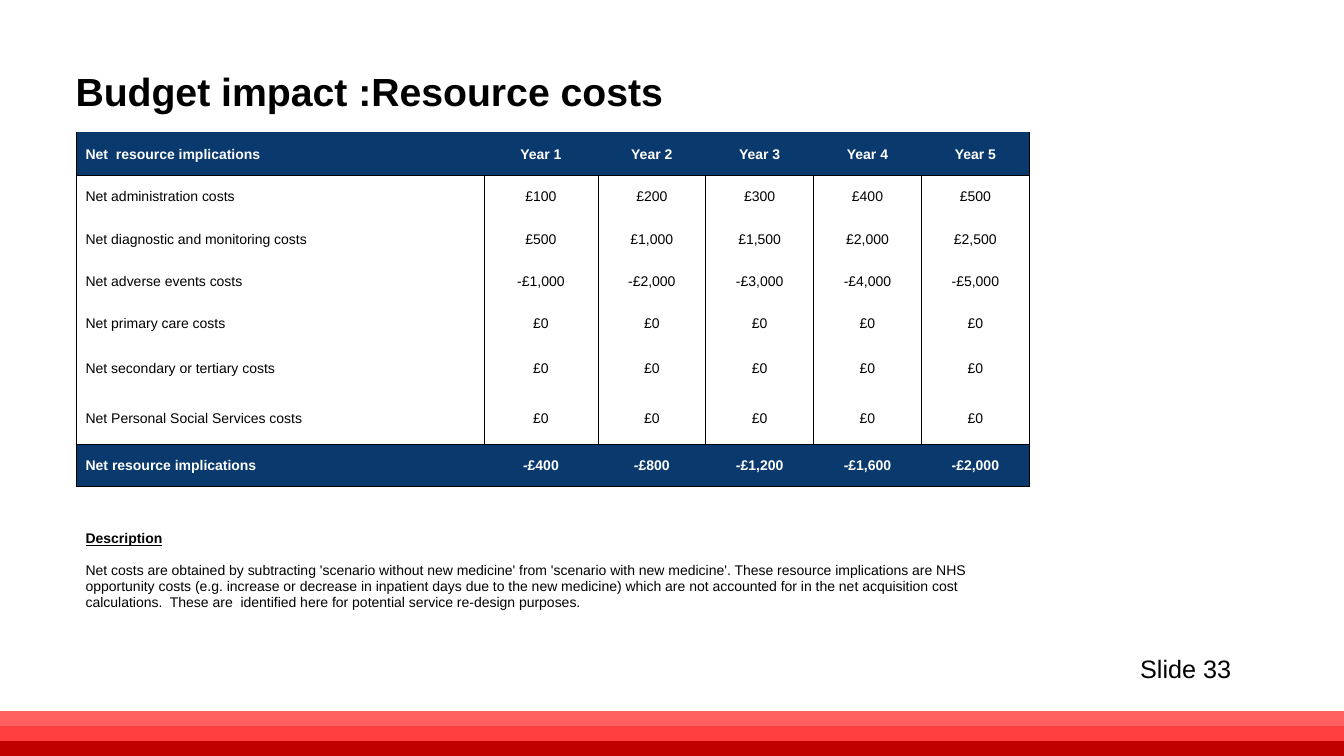
import dataclasses

import lxml.etree
import pptx
import pptx.dml.color
import pptx.enum.shapes
import pptx.enum.text
import pptx.oxml.ns
import pptx.util

ALIGN = pptx.enum.text.PP_ALIGN
ANCHOR = pptx.enum.text.MSO_ANCHOR
qn = pptx.oxml.ns.qn


@dataclasses.dataclass(frozen=True)
class Theme:
    font: str = "Arial"
    title_size: int = 28
    number_size: int = 18
    table_size: int = 10
    black: str = "000000"
    white: str = "FFFFFF"
    navy: str = "09396D"
    stripes: tuple = ("FF6161", "FF3F3F", "C00000")
    thin: float = 0.5
    thick: float = 1


THEME = Theme()
SLIDE_WIDTH = pptx.util.Inches(13.33)
SLIDE_HEIGHT = pptx.util.Inches(7.5)

TITLE_BOX = (4.88, 8, 73.74, 7.73)
TABLE_BOX = (5.7, 17.47, 70.89, 70.27)
NUMBER_BOX = (84.1, 85.73, 8.33, 5.33)
STRIPES_BOX = (0, 94.07, 100, 5.93)

COLUMN_SHARES = (4.04, 1.13, 1.07, 1.07, 1.07, 1.07)
ROW_SHARES = (0.43, 0.42, 0.42, 0.42, 0.42, 0.47, 0.52, 0.42, 0.28, 0.47, 1)

NO_COST = ["£0"] * 5
COST_ROWS = [
    ["Net  resource implications"] + [f"Year {year}" for year in range(1, 6)],
    ["Net administration costs", "£100", "£200", "£300", "£400", "£500"],
    ["Net diagnostic and monitoring costs", "£500", "£1,000", "£1,500", "£2,000", "£2,500"],
    ["Net adverse events costs", "-£1,000", "-£2,000", "-£3,000", "-£4,000", "-£5,000"],
    ["Net primary care costs"] + NO_COST,
    ["Net secondary or tertiary costs"] + NO_COST,
    ["Net Personal Social Services costs"] + NO_COST,
    ["Net resource implications", "-£400", "-£800", "-£1,200", "-£1,600", "-£2,000"],
]
DESCRIPTION = (
    "Net costs are obtained by subtracting 'scenario without new medicine' from "
    "'scenario with new medicine'. These resource implications are NHS opportunity costs "
    "(e.g. increase or decrease in inpatient days due to the new medicine) which are not "
    "accounted for in the net acquisition cost calculations.  These are  identified here "
    "for potential service re-design purposes."
)
TOTAL_ROW = len(COST_ROWS) - 1
HEADING_ROW = TOTAL_ROW + 2
DESCRIPTION_ROW = HEADING_ROW + 1
TABLE_ROWS = COST_ROWS + [[""] * 6, ["Description"] + [""] * 5, [DESCRIPTION] + [""] * 5]


def place(box):
    left, top, width, height = box
    return (
        int(SLIDE_WIDTH * left / 100),
        int(SLIDE_HEIGHT * top / 100),
        int(SLIDE_WIDTH * width / 100),
        int(SLIDE_HEIGHT * height / 100),
    )


def set_attributes(target, values):
    for name, value in values.items():
        setattr(target, name, value)


def write_text(paragraph, text, size, color, **formats):
    run = paragraph.add_run()
    run.text = text
    set_attributes(run.font, {"name": THEME.font, "size": pptx.util.Pt(size), **formats})
    run.font.color.rgb = pptx.dml.color.RGBColor.from_string(color)


def add_label(slide, box, text, size, wrap, anchor, bold=False):
    frame = slide.shapes.add_textbox(*place(box)).text_frame
    set_attributes(frame, {"word_wrap": wrap, "vertical_anchor": anchor})
    write_text(frame.paragraphs[0], text, size, THEME.black, bold=bold)


def add_stripes(slide, box):
    left, top, width, height = place(box)
    stripe_height = height // len(THEME.stripes)
    for index, color in enumerate(THEME.stripes):
        stripe = slide.shapes.add_shape(
            pptx.enum.shapes.MSO_SHAPE.RECTANGLE,
            left, top + index * stripe_height, width, stripe_height,
        )
        stripe.shadow.inherit = False
        stripe.fill.solid()
        stripe.fill.fore_color.rgb = pptx.dml.color.RGBColor.from_string(color)
        stripe.line.fill.background()


def border_widths(row, column):
    last_column = len(COLUMN_SHARES) - 1
    in_costs = row <= TOTAL_ROW
    inner = THEME.thin if 0 < row < TOTAL_ROW else 0
    horizontal = {1: THEME.thin, TOTAL_ROW: THEME.thin, TOTAL_ROW + 1: THEME.thick}
    return {
        "a:lnL": THEME.thick if in_costs and column == 0 else inner,
        "a:lnR": THEME.thick if in_costs and column == last_column else inner,
        "a:lnT": horizontal.get(row, 0),
        "a:lnB": horizontal.get(row + 1, 0),
    }


def draw_borders(cell, widths):
    properties = cell._tc.get_or_add_tcPr()
    for tag, width in widths.items():
        line = lxml.etree.SubElement(properties, qn(tag), w=str(int(pptx.util.Pt(width))))
        if width:
            fill = lxml.etree.SubElement(line, qn("a:solidFill"))
            lxml.etree.SubElement(fill, qn("a:srgbClr"), val=THEME.black)
        else:
            lxml.etree.SubElement(line, qn("a:noFill"))


def fill_cell(cell, text, row, column):
    banner = row in (0, TOTAL_ROW)
    set_attributes(cell, {
        "margin_left": pptx.util.Inches(0.01 if column else 0.09),
        "margin_right": pptx.util.Inches(0.01),
        "margin_top": pptx.util.Inches(0.01),
        "margin_bottom": 0,
        "vertical_anchor": ANCHOR.TOP if row == DESCRIPTION_ROW else ANCHOR.MIDDLE,
    })
    draw_borders(cell, border_widths(row, column))
    cell.fill.solid()
    cell.fill.fore_color.rgb = pptx.dml.color.RGBColor.from_string(
        THEME.navy if banner else THEME.white
    )
    paragraph = cell.text_frame.paragraphs[0]
    paragraph.alignment = ALIGN.CENTER if column else ALIGN.LEFT
    if text:
        write_text(
            paragraph, text, THEME.table_size, THEME.white if banner else THEME.black,
            bold=banner or row == HEADING_ROW, underline=row == HEADING_ROW,
        )
    else:
        lxml.etree.SubElement(
            paragraph._p, qn("a:endParaRPr"), sz=str(THEME.table_size * 100)
        )


def add_cost_table(slide, box):
    left, top, width, height = place(box)
    table = slide.shapes.add_table(
        len(ROW_SHARES), len(COLUMN_SHARES), left, top, width, height
    ).table
    set_attributes(table, {"first_row": False, "horz_banding": False})
    for column, share in zip(table.columns, COLUMN_SHARES):
        column.width = int(width * share / sum(COLUMN_SHARES))
    for row, share in zip(table.rows, ROW_SHARES):
        row.height = int(height * share / sum(ROW_SHARES))
    for row, texts in enumerate(TABLE_ROWS):
        for column, text in enumerate(texts):
            fill_cell(table.cell(row, column), text, row, column)
    table.cell(DESCRIPTION_ROW, 0).merge(
        table.cell(DESCRIPTION_ROW, len(COLUMN_SHARES) - 1)
    )


def main():
    presentation = pptx.Presentation()
    set_attributes(presentation, {"slide_width": SLIDE_WIDTH, "slide_height": SLIDE_HEIGHT})
    slide = presentation.slides.add_slide(presentation.slide_layouts[6])
    add_stripes(slide, STRIPES_BOX)
    add_label(slide, TITLE_BOX, "Budget impact :Resource costs",
              THEME.title_size, True, ANCHOR.BOTTOM, bold=True)
    add_cost_table(slide, TABLE_BOX)
    add_label(slide, NUMBER_BOX, "Slide 33", THEME.number_size, False, ANCHOR.TOP)
    presentation.save("out.pptx")


if __name__ == "__main__":
    main()
